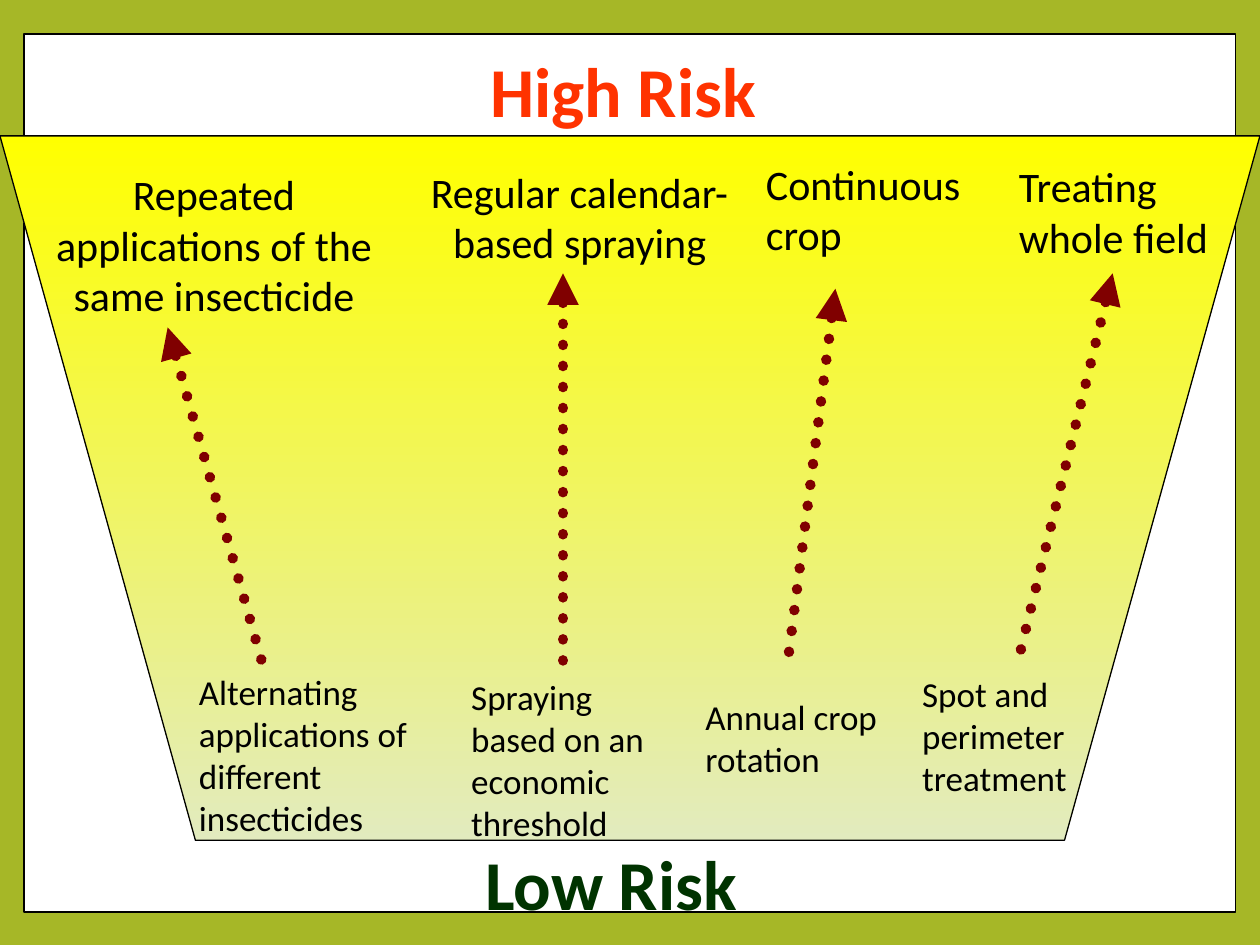
"""Build a slide contrasting high-risk and low-risk insecticide practices."""
from dataclasses import dataclass

from lxml.etree import SubElement
from pptx import Presentation
from pptx.dml.color import RGBColor as Rgb
from pptx.enum.shapes import MSO_CONNECTOR as Connector, MSO_SHAPE as Preset
from pptx.enum.text import MSO_ANCHOR as Anchor, MSO_AUTO_SIZE as AutoSize, PP_ALIGN as Align
from pptx.oxml.ns import qn
from pptx.util import Cm, Pt


@dataclass(frozen=True)
class Theme:
    font: str = "Calibri"
    heading_size: int = 40
    high_size: int = 24
    low_size: int = 20
    border: str = "A6B727"
    panel: str = "FFFFFF"
    ink: str = "000000"
    high_risk: str = "FF3300"
    low_risk: str = "003300"
    funnel_top: str = "FFFF00"
    funnel_bottom: str = "E2EBBE"
    arrow: str = "800000"


THEME = Theme()
FUNNEL = [(0, 2.74), (3.94, 16.94), (21.46, 16.94), (25.4, 2.74)]
PRACTICES = [
    ("Repeated applications of the same insecticide", (0.86, 3.28, 6.91, 3.33), Align.CENTER,
     "Alternating applications of different insecticides", (3.76, 13.39, 5.46, 3.68),
     (3.38, 6.6, 5.28, 13.34)),
    ("Regular calendar-based spraying", (8.33, 3.23, 6.71, 2.31), Align.CENTER,
     "Spraying based on an economic threshold", (9.25, 13.49, 4.72, 3.68),
     (11.35, 5.51, 11.35, 13.59)),
    ("Continuous crop", (15.19, 3.07, 4.9, 2.31), Align.LEFT,
     "Annual crop rotation", (13.97, 13.89, 4.24, 1.96),
     (16.84, 5.82, 15.88, 13.34)),
    ("Treating whole field", (20.29, 3.12, 4.83, 2.31), Align.LEFT,
     "Spot and perimeter treatment", (18.34, 13.44, 3.81, 2.82),
     (22.43, 5.51, 20.52, 13.34)),
]


def set_outline(shape, width):
    shape.shadow.inherit = False
    shape.line.color.rgb = Rgb.from_string(THEME.ink)
    shape.line.width = Pt(width)


def add_panel(slide):
    panel = slide.shapes.add_shape(Preset.RECTANGLE, Cm(0.48), Cm(0.69), Cm(24.43), Cm(17.7))
    panel.fill.solid()
    panel.fill.fore_color.rgb = Rgb.from_string(THEME.panel)
    set_outline(panel, 1)


def add_funnel(slide):
    start, *corners = [(Cm(x), Cm(y)) for x, y in FUNNEL]
    builder = slide.shapes.build_freeform(*start)
    builder.add_line_segments(corners, close=True)
    funnel = builder.convert_to_shape()
    funnel.fill.gradient()
    funnel.fill.gradient_angle = 270
    for stop, color in zip(funnel.fill.gradient_stops, (THEME.funnel_top, THEME.funnel_bottom)):
        stop.color.rgb = Rgb.from_string(color)
    set_outline(funnel, 0.75)


def write_text(shape, text, size, color, bold=False, wrap=True, align=Align.LEFT):
    frame = shape.text_frame
    frame.text = text
    frame_format = {"word_wrap": wrap, "auto_size": AutoSize.SHAPE_TO_FIT_TEXT,
                    "vertical_anchor": Anchor.TOP}
    for name, value in frame_format.items():
        setattr(frame, name, value)
    paragraph = frame.paragraphs[0]
    paragraph.alignment = align
    font = paragraph.runs[0].font
    for name, value in {"name": THEME.font, "size": Pt(size), "bold": bold}.items():
        setattr(font, name, value)
    font.color.rgb = Rgb.from_string(color)


def add_title(slide, text, box):
    title = slide.shapes.title
    for name, value in zip(("left", "top", "width", "height"), box):
        setattr(title, name, Cm(value))
    write_text(title, text, THEME.heading_size, THEME.high_risk, bold=True, wrap=False)
    title.element.getparent().append(title.element)


def add_text(slide, text, box, size, color=THEME.ink, **text_format):
    shape = slide.shapes.add_textbox(*map(Cm, box))
    write_text(shape, text, size, color, **text_format)


def add_dotted_arrow(slide, ends):
    arrow = slide.shapes.add_connector(Connector.STRAIGHT, *map(Cm, ends))
    arrow.line.color.rgb = Rgb.from_string(THEME.arrow)
    arrow.line.width = Pt(6)
    properties = arrow.element.spPr
    outline = properties.find(qn("a:ln"))
    outline.set("cap", "rnd")
    SubElement(outline, qn("a:prstDash"), val="sysDot")
    SubElement(outline, qn("a:headEnd"), type="triangle")
    SubElement(properties, qn("a:effectLst"))


def main():
    presentation = Presentation()
    presentation.slide_width, presentation.slide_height = Cm(25.4), Cm(19.05)
    slide = presentation.slides.add_slide(presentation.slide_layouts[5])
    background = slide.background.fill
    background.solid()
    background.fore_color.rgb = Rgb.from_string(THEME.border)
    add_panel(slide)
    add_funnel(slide)
    add_title(slide, "High Risk", (9.63, 0.84, 5.94, 1.96))
    add_text(slide, "Low Risk", (9.53, 16.81, 5.66, 1.96), THEME.heading_size,
             THEME.low_risk, bold=True, wrap=False)
    for high, high_box, align, low, low_box, ends in PRACTICES:
        add_text(slide, high, high_box, THEME.high_size, align=align)
        add_text(slide, low, low_box, THEME.low_size)
        add_dotted_arrow(slide, ends)
    presentation.save("out.pptx")


if __name__ == "__main__":
    main()
